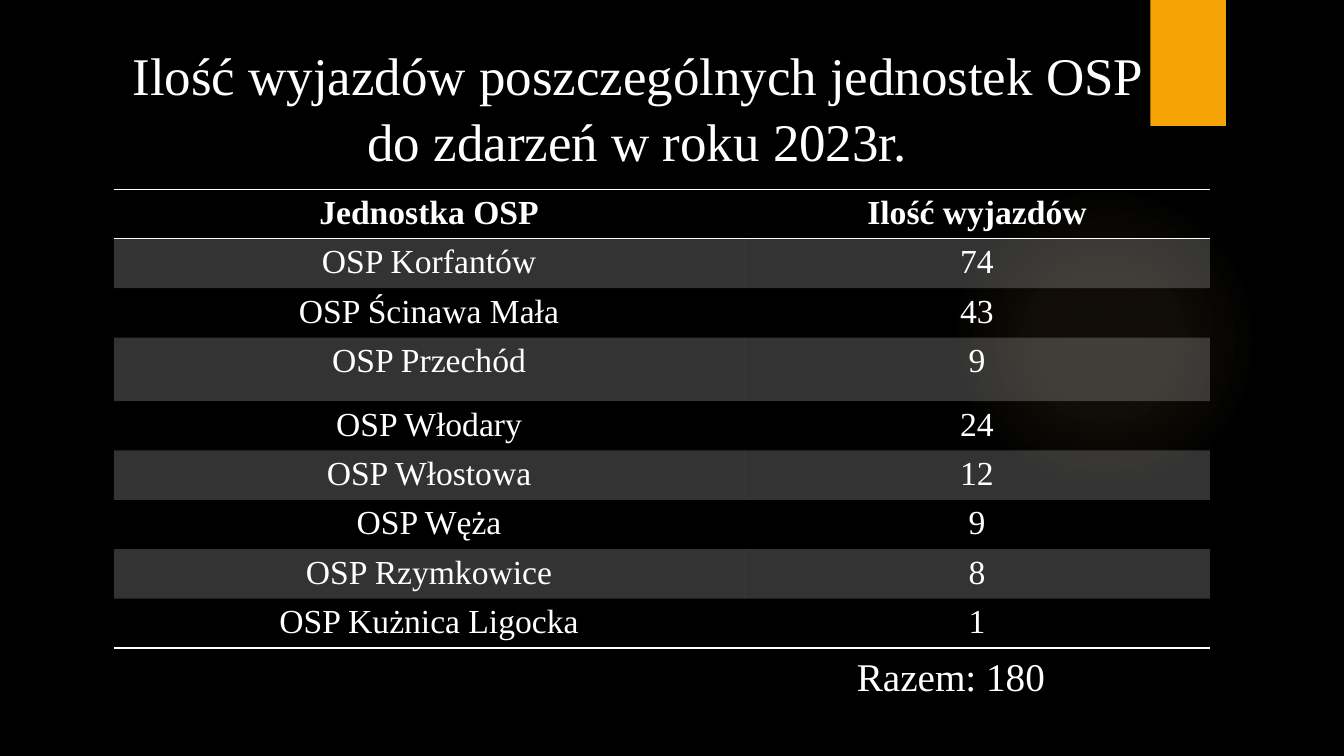
import pptx
import pptx.util
import pptx.dml.color
import pptx.enum.shapes
import pptx.enum.text
import pptx.oxml
import pptx.oxml.ns
from pptx.util import Inches

COLORS = {"back": "000000", "text": "FFFFFF", "band": "FFFFFF",
          "tab": "F5A408", "glow": "FAC96A"}
FONT = "Times New Roman"
NO_STYLE = "{2D5ABB26-0587-4C30-8999-92F81FD0307C}"
NS = pptx.oxml.ns.nsdecls("a")
ROWS = [("Jednostka OSP", "Ilość wyjazdów"),
        ("OSP Korfantów", "74"),
        ("OSP Ścinawa Mała", "43"),
        ("OSP Przechód", "9"),
        ("OSP Włodary", "24"),
        ("OSP Włostowa", "12"),
        ("OSP Węża", "9"),
        ("OSP Rzymkowice", "8"),
        ("OSP Kużnica Ligocka", "1")]


def rgb(name):
    """Return the named colour."""
    return pptx.dml.color.RGBColor.from_string(COLORS[name])


def write(tf, text, size, align, bold=False):
    """Fill a text frame with one formatted paragraph."""
    p = tf.paragraphs[0]
    p.alignment = getattr(pptx.enum.text.PP_ALIGN, align)
    r = p.add_run()
    r.text = text
    for key, value in {"name": FONT, "size": pptx.util.Pt(size), "bold": bold}.items():
        setattr(r.font, key, value)
    r.font.color.rgb = rgb("text")
    return p


def add_plain(s, kind, box, color):
    """Add a preset shape with a solid fill and no outline."""
    sp = s.shapes.add_shape(getattr(pptx.enum.shapes.MSO_SHAPE, kind), *map(Inches, box))
    sp.shadow.inherit = False
    sp.fill.solid()
    sp.fill.fore_color.rgb = rgb(color)
    sp.line.fill.background()
    return sp


def add_decor(s, glow_box, tab_box):
    """Place the soft glow and the tab at the top edge."""
    sp = add_plain(s, "OVAL", glow_box, "glow")
    stops = "".join(
        f'<a:gs pos="{pos * 1000}"><a:srgbClr val="{COLORS["glow"]}">'
        f'<a:alpha val="{alpha * 1000}"/></a:srgbClr></a:gs>'
        for pos, alpha in ((0, 7), (36, 6), (69, 0), (100, 0)))
    grad = pptx.oxml.parse_xml(
        f'<a:gradFill {NS} rotWithShape="1"><a:gsLst>{stops}</a:gsLst><a:path path="circle">'
        '<a:fillToRect l="50000" t="50000" r="50000" b="50000"/></a:path></a:gradFill>')
    solid = sp.fill._xPr.find(pptx.oxml.ns.qn("a:solidFill"))
    solid.getparent().replace(solid, grad)
    add_plain(s, "RECTANGLE", tab_box, "tab")


def add_title(s, box, text):
    """Move and format the title placeholder."""
    sp = s.shapes.title
    for key, value in zip(("left", "top", "width", "height"), box):
        setattr(sp, key, Inches(value))
    tf = sp.text_frame
    for key, value in {"word_wrap": True, "margin_left": Inches(0.05),
                       "margin_right": Inches(0.05),
                       "auto_size": pptx.enum.text.MSO_AUTO_SIZE.NONE,
                       "vertical_anchor": pptx.enum.text.MSO_ANCHOR.MIDDLE}.items():
        setattr(tf, key, value)
    write(tf, text, 37.8, "CENTER").line_spacing = 1.05


def format_cell(cell, banded, edges):
    """Set the band fill and the ruled edges of a cell."""
    tcPr = cell._tc.get_or_add_tcPr()
    for edge in edges:
        tcPr.append(pptx.oxml.parse_xml(
            f'<a:ln{edge} {NS} w="12700"><a:solidFill><a:srgbClr val="{COLORS["text"]}"/>'
            f'</a:solidFill></a:ln{edge}>'))
    if not banded:
        cell.fill.background()
        return
    cell.fill.solid()
    cell.fill.fore_color.rgb = rgb("band")
    clr = tcPr.find(".//" + pptx.oxml.ns.qn("a:srgbClr"))
    clr.append(pptx.oxml.parse_xml(f'<a:alpha {NS} val="20000"/>'))


def add_units_table(s, box, widths, heights):
    """Add the table of call-outs per unit."""
    table = s.shapes.add_table(len(ROWS), len(widths), *map(Inches, box)).table
    table._tbl.tblPr.find(pptx.oxml.ns.qn("a:tableStyleId")).text = NO_STYLE
    for col, width in zip(table.columns, widths):
        col.width = Inches(width)
    edges = {0: "TB", len(ROWS) - 1: "B"}
    for i, values in enumerate(ROWS):
        table.rows[i].height = Inches(heights[i])
        for j, value in enumerate(values):
            cell = table.cell(i, j)
            write(cell.text_frame, value, 24, "CENTER", bold=i == 0)
            format_cell(cell, i % 2 == 1, edges.get(i, ""))


def add_total(s, box, text):
    """Add the total below the table."""
    tf = s.shapes.add_textbox(*map(Inches, box)).text_frame
    tf.word_wrap = True
    write(tf, text, 28, "LEFT")


def main():
    """Build the slide and save it."""
    prs = pptx.Presentation()
    prs.slide_width, prs.slide_height = Inches(13.33), Inches(7.5)
    s = prs.slides.add_slide(prs.slide_layouts[5])
    s.background.fill.solid()
    s.background.fill.fore_color.rgb = rgb("back")
    add_decor(s, (9.41, 1.83, 3.08, 3.08), (11.41, 0, 0.75, 1.25))
    add_title(s, (1.2, 0.31, 10.24, 1.48),
              "Ilość wyjazdów poszczególnych jednostek OSP do zdarzeń w roku 2023r.")
    heights = [0.63 if name == "OSP Przechód" else 0.49 for name, _ in ROWS]
    add_units_table(s, (1.13, 1.88, 10.87, sum(heights)), (6.25, 4.62), heights)
    add_total(s, (8.4, 6.42, 3.04, 0.57), "Razem: 180")
    prs.save("out.pptx")


if __name__ == "__main__":
    main()
